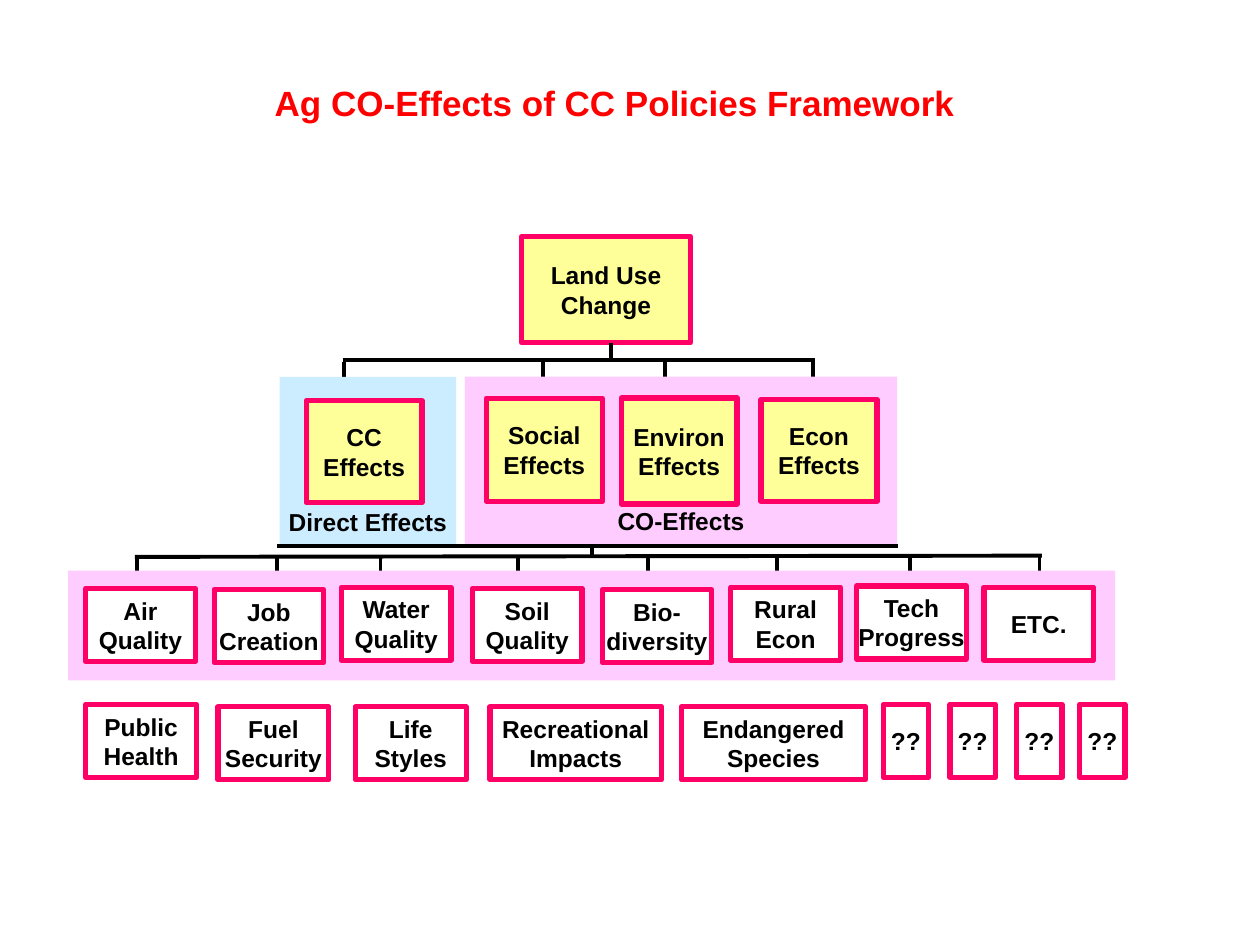
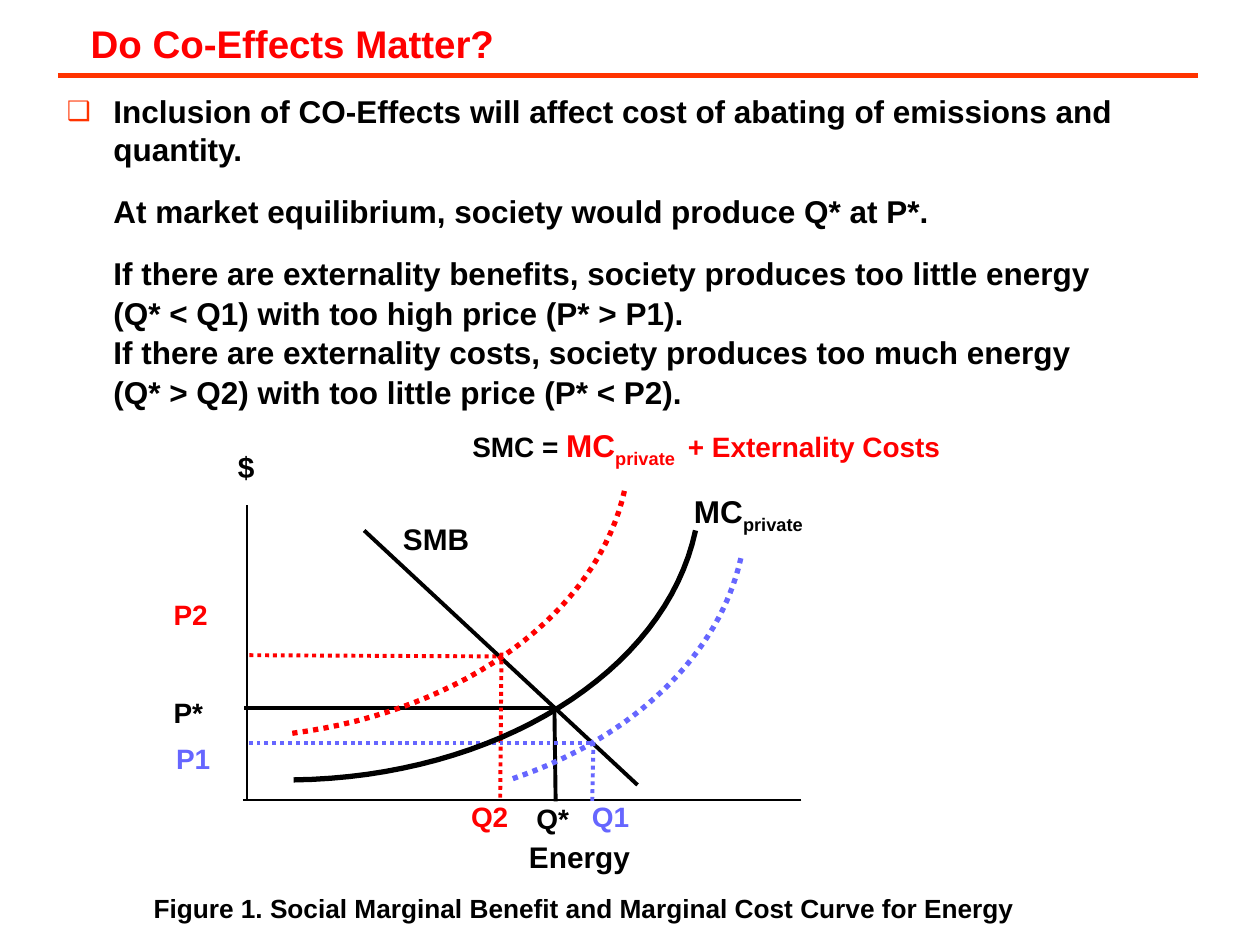
from dataclasses import dataclass
from typing import Any, NamedTuple

from lxml.etree import SubElement
from pptx import Presentation
from pptx.dml.color import RGBColor
from pptx.enum.dml import MSO_LINE
from pptx.enum.shapes import MSO_CONNECTOR, MSO_SHAPE
from pptx.enum.text import MSO_ANCHOR, MSO_AUTO_SIZE, PP_ALIGN
from pptx.oxml.ns import qn
from pptx.util import Emu, Pt

# Shared scale, colours and formats
EMU_PER_PX = 9144  # 100 px to the inch
BLACK, WHITE, RED, BLUE = "000000", "FFFFFF", "FF0000", "6666FF"
PINK, YELLOW, LILAC, SKY, ORANGE = "FF0066", "FFFF99", "FFCCFF", "CCECFF", "FF3300"
FONT_FORMAT = {"name": "Arial", "bold": True}
TEXT_FORMAT = {"auto_size": MSO_AUTO_SIZE.NONE, "vertical_anchor": MSO_ANCHOR.TOP}
NO_WRAP = {**TEXT_FORMAT, "word_wrap": False}
BOX_TEXT = {**NO_WRAP, "vertical_anchor": MSO_ANCHOR.MIDDLE}


class Place(NamedTuple):
    left: float
    top: float
    width: float
    height: float


class Point(NamedTuple):
    x: float
    y: float


class Piece(NamedTuple):
    text: str
    size: int
    color: str = BLACK
    subscript: bool = False


@dataclass
class Box:
    text: str
    place: Place
    fill: str | None = None
    outline: str | None = PINK


@dataclass
class Label:
    pieces: list[Piece]
    place: Place


@dataclass
class Segment:
    start: Point
    end: Point
    color: str = BLACK
    weight: float = 2.25
    dotted: bool = False


@dataclass
class Curve:
    controls: tuple[Point, Point, Point, Point]
    color: str
    dotted: bool


def px(length: float) -> Emu:
    return Emu(round(length * EMU_PER_PX))


def rgb(color: str) -> RGBColor:
    return RGBColor.from_string(color)


def apply_format(target: Any, values: dict[str, Any]) -> None:
    for name, value in values.items():
        setattr(target, name, value)


def move(shape: Any, place: Place) -> None:
    apply_format(shape, {name: px(value) for name, value in place._asdict().items()})


def add_piece(paragraph: Any, piece: Piece) -> None:
    run = paragraph.add_run()
    run.text = piece.text
    apply_format(run.font, {**FONT_FORMAT, "size": Pt(piece.size)})
    run.font.color.rgb = rgb(piece.color)
    if piece.subscript:
        run.font._element.set("baseline", "-25000")


def style_line(line: Any, color: str, weight: float, dotted: bool = False) -> None:
    line.color.rgb = rgb(color)
    line.width = Pt(weight)
    if dotted:
        line.dash_style = MSO_LINE.ROUND_DOT


def set_title(slide: Any, text: str, size: int, place: Place) -> None:
    title = slide.shapes.title
    move(title, place)
    apply_format(title.text_frame, NO_WRAP)
    paragraph = title.text_frame.paragraphs[0]
    paragraph.alignment = PP_ALIGN.LEFT
    add_piece(paragraph, Piece(text, size, RED))


def add_box(slide: Any, box: Box) -> Any:
    shape = slide.shapes.add_shape(MSO_SHAPE.RECTANGLE, *map(px, box.place))
    shape.shadow.inherit = False
    if box.fill:
        shape.fill.solid()
        shape.fill.fore_color.rgb = rgb(box.fill)
    else:
        shape.fill.background()
    if box.outline:
        style_line(shape.line, box.outline, 3)
    else:
        shape.line.fill.background()
    frame = shape.text_frame
    apply_format(frame, BOX_TEXT)
    for number, text in enumerate(box.text.splitlines()):
        paragraph = frame.add_paragraph() if number else frame.paragraphs[0]
        paragraph.alignment = PP_ALIGN.CENTER
        add_piece(paragraph, Piece(text, 14))
    return shape


def add_band(slide: Any, text: str, place: Place, fill: str) -> None:
    frame = add_box(slide, Box(text, place, fill, None)).text_frame
    apply_format(frame, {"vertical_anchor": MSO_ANCHOR.BOTTOM, "margin_bottom": px(8)})


def add_label(slide: Any, label: Label) -> None:
    frame = slide.shapes.add_textbox(*map(px, label.place)).text_frame
    apply_format(frame, NO_WRAP)
    for piece in label.pieces:
        add_piece(frame.paragraphs[0], piece)


def add_segment(slide: Any, segment: Segment) -> None:
    ends = map(px, (*segment.start, *segment.end))
    connector = slide.shapes.add_connector(MSO_CONNECTOR.STRAIGHT, *ends)
    style_line(connector.line, segment.color, segment.weight, segment.dotted)
    SubElement(connector._element.spPr, qn("a:effectLst"))


def add_curve(slide: Any, curve: Curve, steps: int = 32) -> None:
    points = []
    for step in range(steps + 1):
        t = step / steps
        weights = ((1 - t) ** 3, 3 * t * (1 - t) ** 2, 3 * t * t * (1 - t), t ** 3)
        points.append(tuple(
            px(sum(weight * value for weight, value in zip(weights, axis)))
            for axis in zip(*curve.controls)
        ))
    builder = slide.shapes.build_freeform(*points[0])
    builder.add_line_segments(points[1:], close=False)
    shape = builder.convert_to_shape()
    shape.shadow.inherit = False
    shape.fill.background()
    style_line(shape.line, curve.color, 3, curve.dotted)


def set_bullet(paragraph: Any, bullet: str | None) -> None:
    properties = paragraph._p.get_or_add_pPr()
    properties.set("marL", str(px(37)))
    properties.set("indent", str(px(-37 if bullet else 0)))
    if not bullet:
        SubElement(properties, qn("a:buNone"))
        return
    color = SubElement(properties, qn("a:buClr"))
    SubElement(color, qn("a:srgbClr"), val=ORANGE)
    SubElement(properties, qn("a:buSzPct"), val="85000")
    SubElement(properties, qn("a:buChar"), char=bullet)


def build_framework(presentation: Any) -> None:
    slide = presentation.slides.add_slide(presentation.slide_layouts[5])
    set_title(slide, "Ag CO-Effects of CC Policies Framework", 20, Place(208, 60, 564, 44))

    # Tree branches: a bar with a drop to each box
    add_segment(slide, Segment(Point(272, 286), Point(647, 286)))
    add_segment(slide, Segment(Point(107, 442), Point(827, 441)))
    effect_drops = (273, 431, 528, 645)
    outcome_drops = (109, 220, 302, 411, 514, 617, 722, 825)
    for top, drops in ((287, effect_drops), (428, (470,)), (442, outcome_drops)):
        for x in drops:
            add_segment(slide, Segment(Point(x, top), Point(x, top + 14)))

    # Background bands
    add_band(slide, "Direct Effects", Place(222, 299, 140, 135), SKY)
    add_band(slide, "CO-Effects", Place(369, 299, 343, 134), LILAC)
    add_band(slide, "", Place(54, 453, 831, 87), LILAC)
    add_segment(slide, Segment(Point(220, 433), Point(713, 433)))

    # Land use and its effects
    boxes = [
        Box("Land Use\nChange", Place(414, 188, 134, 84), YELLOW),
        Box("CC\nEffects", Place(243, 318, 92, 81), YELLOW),
        Box("Social\nEffects", Place(386, 316, 92, 82), YELLOW),
        Box("Environ\nEffects", Place(493, 316, 92, 84), YELLOW),
        Box("Econ\nEffects", Place(604, 317, 92, 81), YELLOW),
    ]
    # Outcomes inside the band
    outcomes = (
        ("Air\nQuality", 68, 467), ("Job\nCreation", 170, 468),
        ("Water\nQuality", 271, 466), ("Soil\nQuality", 375, 467),
        ("Bio-\ndiversity", 478, 468), ("Rural\nEcon", 580, 466),
        ("Tech\nProgress", 680, 465), ("ETC.", 781, 466),
    )
    boxes += [Box(text, Place(left, top, 87, 58), WHITE) for text, left, top in outcomes]
    # Further outcomes below the band
    further = (
        ("Public\nHealth", 68, 559, 88), ("Fuel\nSecurity", 173, 561, 88),
        ("Life\nStyles", 282, 561, 88), ("Recreational\nImpacts", 389, 561, 136),
        ("Endangered\nSpecies", 541, 561, 146),
        *(("??", left, 559, 36) for left in (701, 754, 807, 857)),
    )
    boxes += [Box(text, Place(left, top, width, 58)) for text, left, top, width in further]
    for box in boxes:
        add_box(slide, box)
    add_segment(slide, Segment(Point(485, 272), Point(485, 287)))


def build_cost_curves(presentation: Any) -> None:
    slide = presentation.slides.add_slide(presentation.slide_layouts[1])
    set_title(slide, "Do Co-Effects Matter?", 22, Place(62, 11, 342, 47))
    add_segment(slide, Segment(Point(46, 60), Point(951, 60), ORANGE, 3))

    # Statements with the space before each, in points
    statements = (
        ("Inclusion of CO-Effects will affect cost of abating of emissions and quantity.", 1),
        ("At market equilibrium, society would produce Q* at P*.", 14),
        ("If there are externality benefits, society produces too little energy", 14),
        ("(Q* < Q1) with too high price (P* > P1).", 1),
        ("If there are externality costs, society produces too much energy", 1),
        ("(Q* > Q2) with too little price (P* < P2).", 1),
    )
    body = slide.placeholders[1]
    move(body, Place(43, 68, 924, 597))
    frame = body.text_frame
    apply_format(frame, {**TEXT_FORMAT, "word_wrap": True})
    for number, (text, space) in enumerate(statements):
        paragraph = frame.add_paragraph() if number else frame.paragraphs[0]
        set_bullet(paragraph, None if number else "❑")
        paragraph.space_before = Pt(space)
        add_piece(paragraph, Piece(text, 18))

    # Axes, demand line and guides to the axes
    for segment in (
        Segment(Point(196, 401), Point(196, 636), weight=0.75),
        Segment(Point(636, 635), Point(193, 635), weight=0.75),
        Segment(Point(440, 562), Point(441, 636)),
        Segment(Point(444, 562), Point(194, 562)),
        Segment(Point(198, 520), Point(399, 521), RED, dotted=True),
        Segment(Point(289, 421), Point(506, 623)),
        Segment(Point(398, 518), Point(397, 636), RED, dotted=True),
        Segment(Point(468, 590), Point(197, 590), BLUE, dotted=True),
        Segment(Point(471, 589), Point(470, 637), BLUE, dotted=True),
    ):
        add_segment(slide, segment)

    # Marginal cost curves
    for curve in (
        Curve((Point(232, 582), Point(369, 564), Point(475, 486), Point(496, 388)), RED, True),
        Curve((Point(233, 619), Point(393, 617), Point(528, 534), Point(552, 421)), BLACK, False),
        Curve((Point(407, 618), Point(504, 585), Point(571, 519), Point(588, 443)), BLUE, True),
    ):
        add_curve(slide, curve)

    # Labels and caption
    caption = "Figure 1. Social Marginal Benefit and Marginal Cost Curve for Energy"
    for label in (
        Label([Piece("$", 17)], Place(179, 351, 33, 38)),
        Label([Piece("SMB", 17)], Place(310, 408, 73, 38)),
        Label([Piece("Energy", 17)], Place(410, 661, 100, 38)),
        Label([Piece("P2", 16, RED)], Place(128, 469, 47, 37)),
        Label([Piece("P*", 16)], Place(128, 547, 44, 37)),
        Label([Piece("P1", 16, BLUE)], Place(130, 584, 47, 37)),
        Label([Piece("Q2", 16, RED)], Place(364, 630, 50, 37)),
        Label([Piece("Q*", 16)], Place(416, 631, 46, 37)),
        Label([Piece("Q1", 16, BLUE)], Place(460, 630, 50, 37)),
        Label([Piece("MC", 18), Piece("private", 18, subscript=True)], Place(541, 386, 114, 40)),
        Label([Piece("SMC = ", 16), Piece("MC", 18, RED), Piece("private ", 18, RED, True),
               Piece(" + Externality Costs", 16, RED)], Place(365, 333, 391, 40)),
        Label([Piece(caption, 15)], Place(112, 703, 702, 35)),
    ):
        add_label(slide, label)


def main() -> None:
    presentation = Presentation()
    apply_format(presentation, {"slide_width": px(1000), "slide_height": px(750)})
    build_framework(presentation)
    build_cost_curves(presentation)
    presentation.save("out.pptx")


if __name__ == "__main__":
    main()
